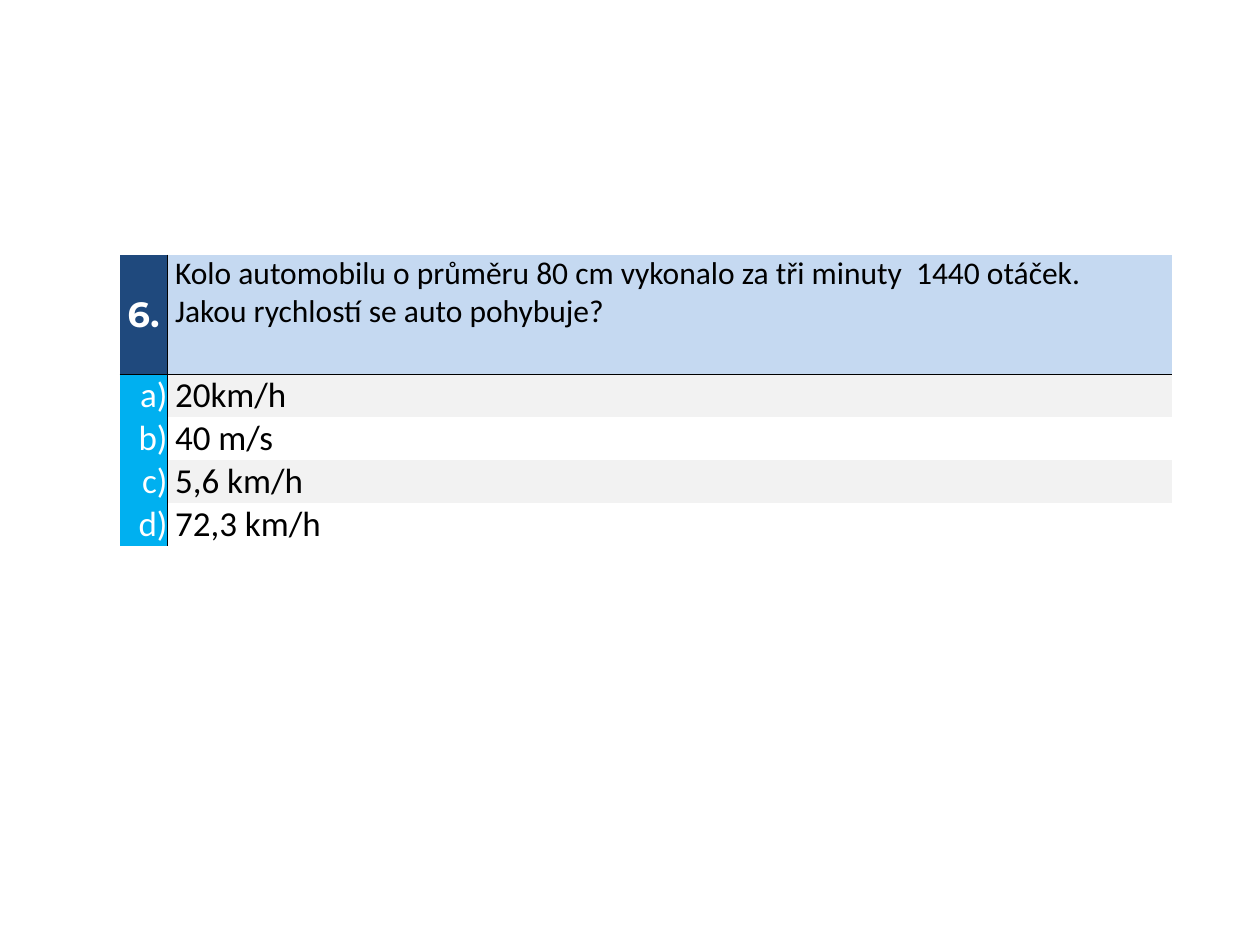
import dataclasses

import lxml.etree
import pptx
import pptx.dml.color
import pptx.enum.text
import pptx.oxml.ns
import pptx.util

Inches = pptx.util.Inches
Align = pptx.enum.text.PP_ALIGN
Anchor = pptx.enum.text.MSO_ANCHOR


@dataclasses.dataclass(frozen=True)
class Theme:
    body_font: str = "Calibri"
    number_font: str = "Montserrat"
    question_size: int = 18
    answer_size: int = 20
    border_width: float = 0.5
    black: str = "000000"
    white: str = "FFFFFF"
    navy: str = "1F497D"
    pale_blue: str = "C5D9F1"
    cyan: str = "00B0F0"
    grey: str = "F2F2F2"


def write_text(frame, text, font, size, color, bold=False, align=Align.LEFT):
    frame.word_wrap = True
    frame.text = text
    for paragraph in frame.paragraphs:
        paragraph.alignment = align
        paragraph.font.name = font
        paragraph.font.size = pptx.util.Pt(size)
        paragraph.font.bold = bold
        paragraph.font.color.rgb = pptx.dml.color.RGBColor.from_string(color)


class QuizSlide:
    def __init__(self, presentation, theme):
        self.theme = theme
        self.slide = presentation.slides.add_slide(presentation.slide_layouts[6])

    def add_table(self, left, top, widths, heights):
        frame = self.slide.shapes.add_table(
            len(heights), len(widths), Inches(left), Inches(top),
            Inches(sum(widths)), Inches(sum(heights)))
        table = frame.table
        table.first_row = False
        table.horz_banding = False
        for column, width in zip(table.columns, widths):
            column.width = Inches(width)
        for row, height in zip(table.rows, heights):
            row.height = Inches(height)
        return table

    def set_borders(self, cell, visible_sides):
        properties = cell._tc.get_or_add_tcPr()
        qn = pptx.oxml.ns.qn
        for side in "LRTB":
            line = lxml.etree.SubElement(properties, qn(f"a:ln{side}"))
            if side in visible_sides:
                line.set("w", str(pptx.util.Pt(self.theme.border_width)))
                fill = lxml.etree.SubElement(line, qn("a:solidFill"))
                lxml.etree.SubElement(fill, qn("a:srgbClr"), val=self.theme.black)
            else:
                line.set("w", "0")
                lxml.etree.SubElement(line, qn("a:noFill"))

    def fill_cell(self, cell, text, fill, borders, anchor, indent=0, **text_format):
        self.set_borders(cell, borders)
        cell.margin_left = Inches(indent)
        cell.margin_right = cell.margin_top = cell.margin_bottom = 0
        cell.vertical_anchor = anchor
        if fill:
            cell.fill.solid()
            cell.fill.fore_color.rgb = pptx.dml.color.RGBColor.from_string(fill)
        else:
            cell.fill.background()
        write_text(cell.text_frame, text, **text_format)

    def add_question(self, number, question, answers):
        theme = self.theme
        indent = 0.06
        table = self.add_table(0.95, 2.02, [0.38, 7.97], [0.95] + [0.34] * len(answers))
        self.fill_cell(table.cell(0, 0), number, theme.navy, "RB", Anchor.MIDDLE,
                       font=theme.number_font, size=theme.answer_size,
                       color=theme.white, bold=True, align=Align.CENTER)
        self.fill_cell(table.cell(0, 1), question, theme.pale_blue, "LB", Anchor.TOP,
                       indent, font=theme.body_font, size=theme.question_size,
                       color=theme.black)
        for row, (letter, answer) in enumerate(zip("abcd", answers), start=1):
            top_border = "T" if row == 1 else ""
            self.fill_cell(table.cell(row, 0), f"{letter})", theme.cyan,
                           "R" + top_border, Anchor.MIDDLE, font=theme.body_font,
                           size=theme.answer_size, color=theme.white, align=Align.RIGHT)
            self.fill_cell(table.cell(row, 1), answer, theme.grey if row % 2 else None,
                           "L" + top_border, Anchor.BOTTOM, indent, font=theme.body_font,
                           size=theme.answer_size, color=theme.black)


def main():
    presentation = pptx.Presentation()
    presentation.slide_width = Inches(10)
    presentation.slide_height = Inches(7.5)
    quiz = QuizSlide(presentation, Theme())
    quiz.add_question(
        "6.",
        "Kolo automobilu o průměru 80 cm vykonalo za tři minuty  1440 otáček.\n"
        "Jakou rychlostí se auto pohybuje?",
        ["20km/h", "40 m/s", "5,6 km/h", "72,3 km/h"])
    presentation.save("out.pptx")


if __name__ == "__main__":
    main()
